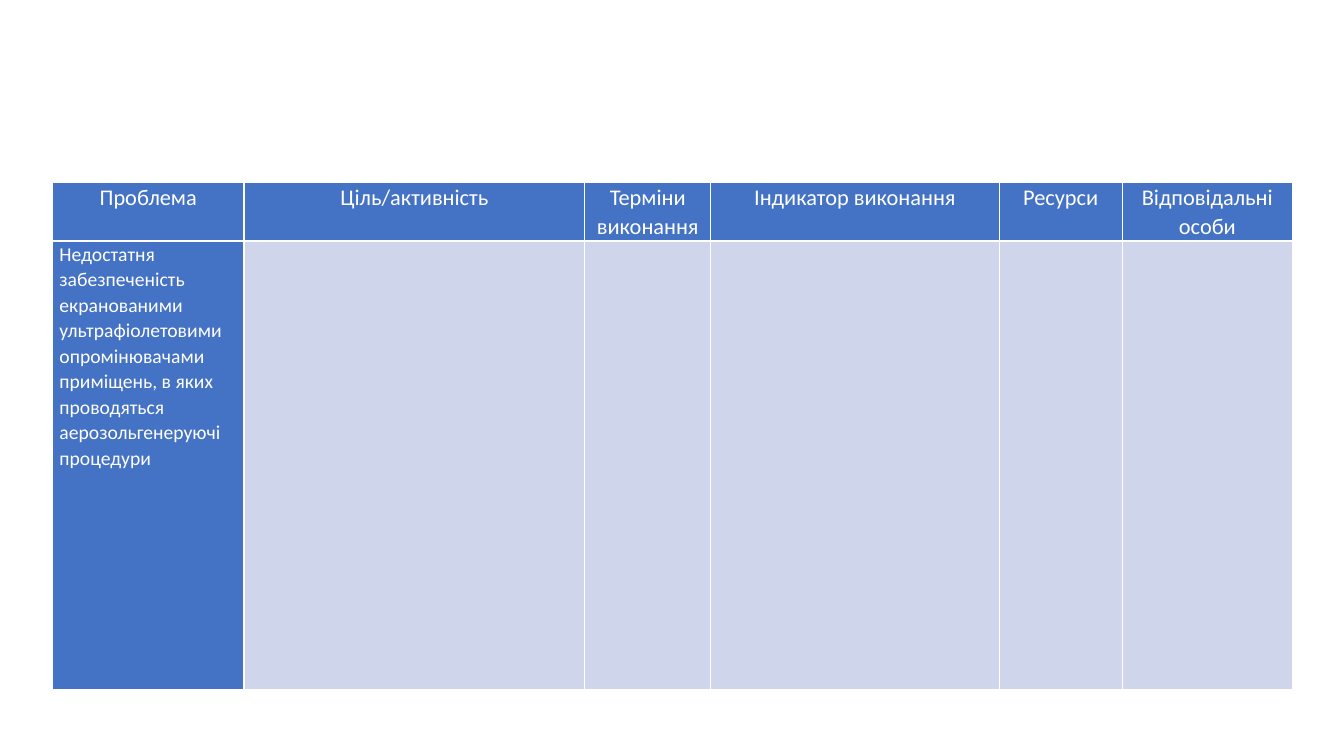
from dataclasses import dataclass

from lxml.etree import SubElement
from pptx import Presentation
from pptx.dml.color import RGBColor
from pptx.enum.text import PP_ALIGN as Align
from pptx.oxml.ns import qn
from pptx.util import Emu, Pt

EMU_PER_PX = 9144  # 100 px to the inch


@dataclass(frozen=True)
class Theme:
    font: str = "Calibri"
    blue: str = "4472C4"
    pale: str = "CFD5EA"
    white: str = "FFFFFF"
    header_size: int = 16
    body_size: int = 14
    border: int = 1


@dataclass(frozen=True)
class Column:
    title: str
    width: int
    body: str = ""


THEME = Theme()
LEFT, TOP = 52, 181
HEADER_H, BODY_H = 54, 445
COLUMNS = (
    Column("Проблема", 190,
           "Недостатня забезпеченість екранованими ультрафіолетовими "
           "опромінювачами приміщень, в яких проводяться "
           "аерозольгенеруючі процедури"),
    Column("Ціль/активність", 338),
    Column("Терміни виконання", 125),
    Column("Індикатор виконання", 286),
    Column("Ресурси", 122),
    Column("Відповідальні особи", 169),
)


def px(n: int) -> Emu:
    return Emu(n * EMU_PER_PX)


def set_borders(cell) -> None:
    tcPr = cell._tc.get_or_add_tcPr()
    for i, side in enumerate("LRTB"):
        ln = SubElement(tcPr, qn(f"a:ln{side}"), w=str(Pt(THEME.border)))
        fill = SubElement(ln, qn("a:solidFill"))
        SubElement(fill, qn("a:srgbClr"), val=THEME.white)
        tcPr.insert(i, ln)  # borders stand before the fill


def fill_cell(cell, text: str, color: str, size: int, align: Align) -> None:
    margins = {"margin_left": px(7), "margin_right": px(7),
               "margin_top": 0, "margin_bottom": 0}
    for name, value in margins.items():
        setattr(cell, name, value)
    cell.fill.solid()
    cell.fill.fore_color.rgb = RGBColor.from_string(color)
    set_borders(cell)
    if not text:
        return
    p = cell.text_frame.paragraphs[0]
    for name, value in {"alignment": align, "line_spacing": 1.07,
                        "space_after": Pt(8)}.items():
        setattr(p, name, value)
    r = p.add_run()
    r.text = text
    for name, value in {"name": THEME.font, "size": Pt(size),
                        "bold": False}.items():
        setattr(r.font, name, value)
    r.font.color.rgb = RGBColor.from_string(THEME.white)


def add_plan_table(s) -> None:
    width = sum(c.width for c in COLUMNS)
    table = s.shapes.add_table(2, len(COLUMNS), px(LEFT), px(TOP), px(width),
                               px(HEADER_H + BODY_H)).table
    table.first_col = True
    for row, height in zip(table.rows, (HEADER_H, BODY_H)):
        row.height = px(height)
    for i, col in enumerate(COLUMNS):
        table.columns[i].width = px(col.width)
        fill_cell(table.cell(0, i), col.title, THEME.blue,
                  THEME.header_size, Align.CENTER)
        fill_cell(table.cell(1, i), col.body,
                  THEME.blue if i == 0 else THEME.pale,
                  THEME.body_size, Align.LEFT)


def main() -> None:
    prs = Presentation()
    prs.slide_width, prs.slide_height = px(1333), px(750)
    s = prs.slides.add_slide(prs.slide_layouts[6])
    add_plan_table(s)
    prs.save("out.pptx")


if __name__ == "__main__":
    main()
